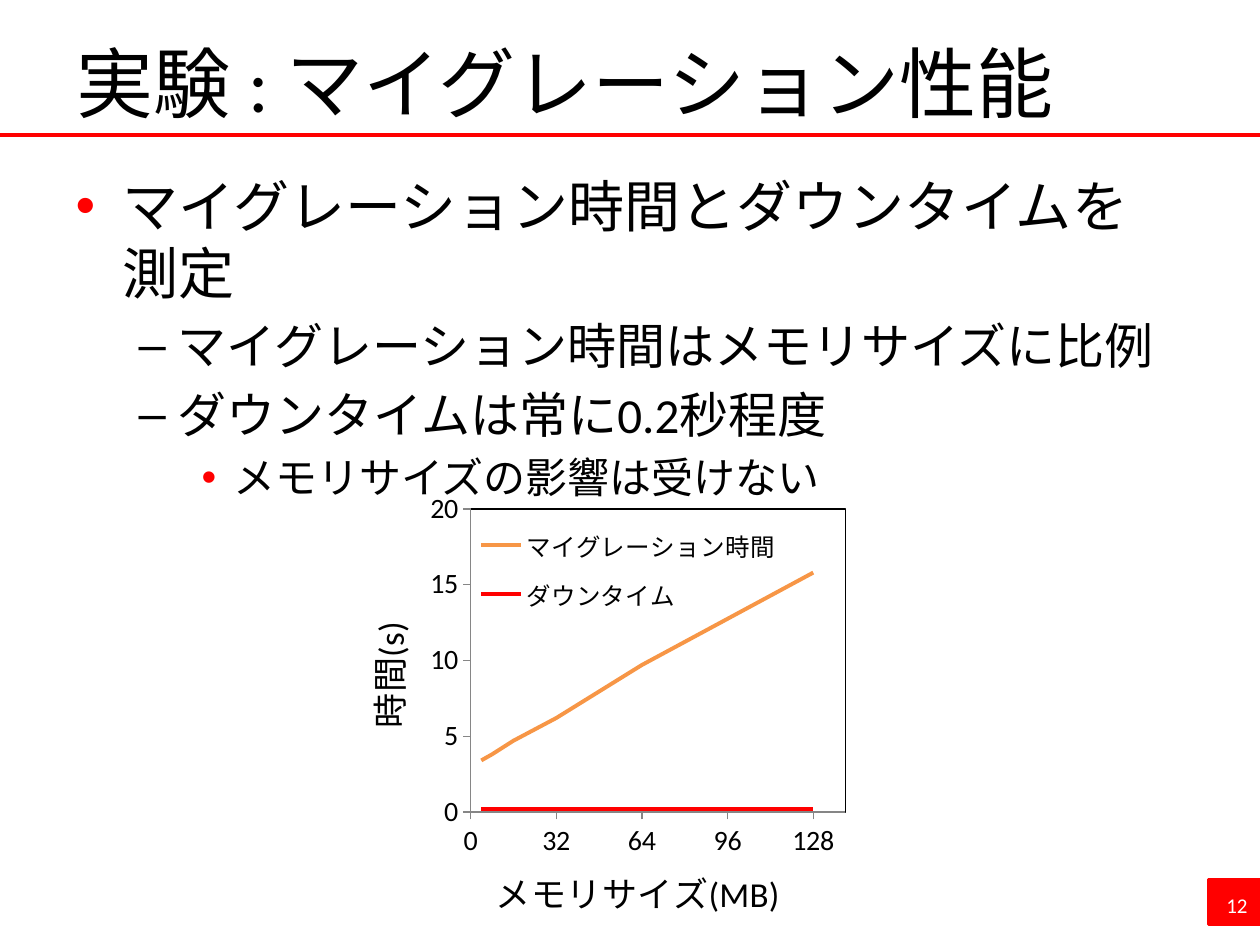
from lxml import etree
from pptx import Presentation
from pptx.chart.data import XyChartData as XyData
from pptx.dml.color import RGBColor as Rgb
from pptx.enum.chart import XL_CHART_TYPE as Kind
from pptx.enum.chart import XL_LEGEND_POSITION as Place
from pptx.enum.chart import XL_TICK_MARK as Tick
from pptx.enum.shapes import MSO_CONNECTOR as Link
from pptx.enum.shapes import MSO_SHAPE as Form
from pptx.enum.text import MSO_ANCHOR as Anchor
from pptx.enum.text import MSO_AUTO_SIZE as Fit
from pptx.enum.text import PP_ALIGN as Align
from pptx.oxml import parse_xml
from pptx.oxml.ns import nsdecls, qn
from pptx.util import Inches, Pt

COLORS = {
    "red": "FF0000",
    "orange": "F79646",
    "black": "000000",
    "white": "FFFFFF",
    "gray": "868686",
}
LATIN = "Calibri"
ASIAN = "Noto Sans CJK JP"
POINTS = [
    (0, 32, "マイグレーション時間とダウンタイムを測定"),
    (1, 28, "マイグレーション時間はメモリサイズに比例"),
    (1, 28, "ダウンタイムは常に0.2秒程度"),
    (2, 24, "メモリサイズの影響は受けない"),
]
SIZES = [4, 8, 16, 32, 64, 128]
SERIES = [
    ("マイグレーション時間", "orange", [3.4, 3.8, 4.7, 6.2, 9.7, 15.8]),
    ("ダウンタイム", "red", [0.2] * len(SIZES)),
]


def color(name):
    return Rgb.from_string(COLORS[name])


def place(shape, left, top, width, height):
    shape.left, shape.top = Inches(left), Inches(top)
    shape.width, shape.height = Inches(width), Inches(height)


def set_font(font, size, tone="black"):
    font.name = LATIN
    font.size = Pt(size)
    font.bold = False
    font.color.rgb = color(tone)


def add_run(para, text, size, tone="black"):
    run = para.add_run()
    run.text = text
    set_font(run.font, size, tone)
    latin = run.font._element.find(qn("a:latin"))
    latin.addnext(parse_xml(f'<a:ea {nsdecls("a")} typeface="{ASIAN}"/>'))


def add_rule(slide):
    rule = slide.shapes.add_connector(
        Link.STRAIGHT, 0, Inches(1.07), Inches(10), Inches(1.07))
    rule.line.color.rgb = color("red")
    rule.line.width = Pt(2.25)
    etree.SubElement(rule._element.spPr, qn("a:effectLst"))


def add_badge(slide):
    box = slide.shapes.add_shape(
        Form.RECTANGLE, Inches(9.59), Inches(6.98), Inches(0.41), Inches(0.36))
    box.shadow.inherit = False
    box.fill.solid()
    box.fill.fore_color.rgb = color("red")
    box.line.color.rgb = color("red")
    box.line.width = Pt(2)
    label = slide.shapes.add_textbox(
        Inches(9.59), Inches(6.98), Inches(0.41), Inches(0.4))
    frame = label.text_frame
    frame.word_wrap = True
    frame.vertical_anchor = Anchor.MIDDLE
    para = frame.paragraphs[0]
    para.alignment = Align.RIGHT
    add_run(para, "12", 12, "white")


def add_title(slide):
    title = slide.shapes.title
    place(title, 0.51, 0.21, 8.98, 0.87)
    frame = title.text_frame
    frame.auto_size = Fit.NONE
    frame.vertical_anchor = Anchor.MIDDLE
    para = frame.paragraphs[0]
    para.alignment = Align.LEFT
    add_run(para, "実験 : マイグレーション性能", 44)


def add_list(slide):
    body = slide.placeholders[1]
    place(body, 0.5, 1.31, 9, 5.35)
    frame = body.text_frame
    frame.auto_size = Fit.NONE
    for i, (level, size, text) in enumerate(POINTS):
        para = frame.add_paragraph() if i else frame.paragraphs[0]
        para.level = level
        if level != 1:
            props = para._p.get_or_add_pPr()
            tint = etree.SubElement(props, qn("a:buClr"))
            etree.SubElement(tint, qn("a:srgbClr"), val=COLORS["red"])
        add_run(para, text, size)


def make_layout(left, top, width, height, inner=False):
    target = '<c:layoutTarget val="inner"/>' if inner else ""
    return parse_xml(
        f'<c:layout {nsdecls("c")}><c:manualLayout>{target}'
        '<c:xMode val="edge"/><c:yMode val="edge"/>'
        f'<c:x val="{left}"/><c:y val="{top}"/>'
        f'<c:w val="{width}"/><c:h val="{height}"/>'
        '</c:manualLayout></c:layout>')


def style_axis(axis, text, top, step):
    axis.minimum_scale, axis.maximum_scale = 0, top
    axis.major_unit = step
    axis.has_major_gridlines = False
    axis.major_tick_mark = Tick.OUTSIDE
    axis.minor_tick_mark = Tick.NONE
    axis.format.line.color.rgb = color("gray")
    axis.format.line.width = Pt(0.75)
    set_font(axis.tick_labels.font, 16)
    add_run(axis.axis_title.text_frame.paragraphs[0], text, 20)


def style_plot(chart):
    area = chart._chartSpace.chart.plotArea
    for old in area.findall(qn("c:layout")):
        area.remove(old)
    area.insert(0, make_layout(0.22, 0.1, 0.7, 0.65, inner=True))
    area.append(parse_xml(
        f'<c:spPr {nsdecls("c", "a")}><a:noFill/><a:ln w="9525"><a:solidFill>'
        f'<a:srgbClr val="{COLORS["black"]}"/></a:solidFill></a:ln></c:spPr>'))


def style_key(chart):
    chart.has_legend = True
    key = chart.legend
    key.position = Place.RIGHT
    key.include_in_layout = False
    set_font(key.font, 14)
    node = key._element
    for old in node.findall(qn("c:layout")):
        node.remove(old)
    node.find(qn("c:legendPos")).addnext(make_layout(0.24, 0.11, 0.55, 0.24))


def add_graph(slide):
    data = XyData()
    for name, _, values in SERIES:
        line = data.add_series(name)
        for size, value in zip(SIZES, values):
            line.add_data_point(size, value)
    chart = slide.shapes.add_chart(
        Kind.XY_SCATTER_SMOOTH_NO_MARKERS, Inches(2.8), Inches(3.67),
        Inches(4.25), Inches(3.7), data).chart
    set_font(chart.font, 10)
    chart.has_title = False
    chart.plots[0].vary_by_categories = False
    for line, (_, tone, _) in zip(chart.plots[0].series, SERIES):
        line.smooth = True
        line.format.line.color.rgb = color(tone)
        line.format.line.width = Pt(2.25)
    style_axis(chart.category_axis, "メモリサイズ(MB)", 140, 32)
    style_axis(chart.value_axis, "時間(s)", 20, 5)
    style_plot(chart)
    style_key(chart)


def main():
    deck = Presentation()
    deck.slide_width, deck.slide_height = Inches(10), Inches(7.5)
    slide = deck.slides.add_slide(deck.slide_layouts[1])
    add_rule(slide)
    add_badge(slide)
    add_title(slide)
    add_list(slide)
    add_graph(slide)
    deck.save("out.pptx")


if __name__ == "__main__":
    main()
